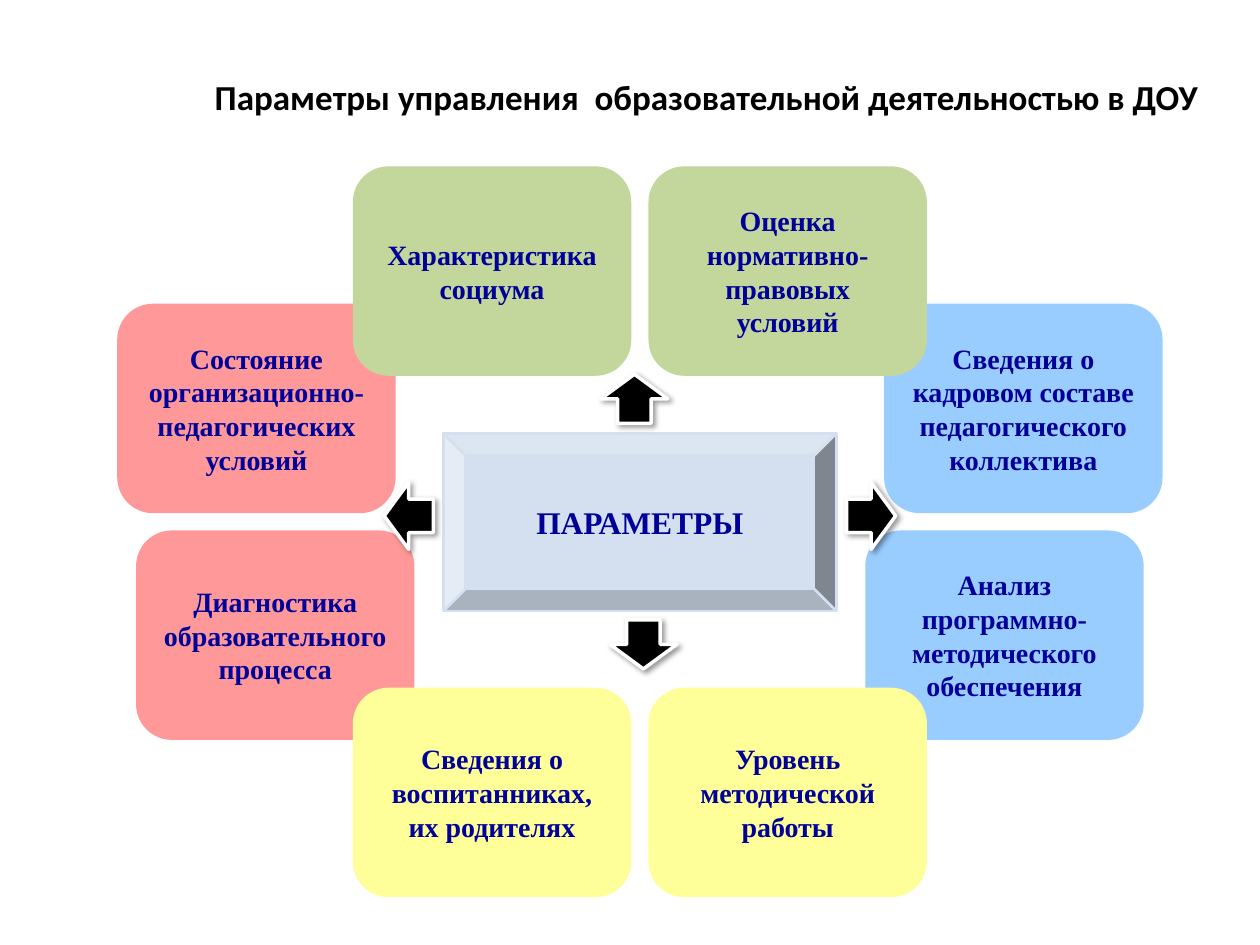
from lxml import etree
from pptx import Presentation
from pptx.dml.color import RGBColor
from pptx.enum import shapes, text
from pptx.oxml import ns
from pptx.util import Cm, Pt

COLORS = {
    "navy": "000099", "black": "000000", "white": "FFFFFF", "core": "D4E0EF",
    "red": "FF9999", "yellow": "FFFF99", "green": "C3D69B", "blue": "99CCFF",
}
SHAPE = shapes.MSO_SHAPE
AXIS = 12.9                # vertical axis of the diagram, cm
CARD_W, CARD_H = 5.56, 4.17
ARROW_W, ARROW_H = 1.35, 0.99


class ParameterSlide:
    label_font = "Times New Roman"
    title_font = "Calibri"

    def __init__(self, slide):
        self.slide = slide

    def add_words(self, frame, words, font, size, color):
        frame.word_wrap = True
        paragraph = frame.paragraphs[0]
        paragraph.alignment = text.PP_ALIGN.CENTER
        run = paragraph.add_run()
        run.text = words
        run.font.name = font
        run.font.size = Pt(size)
        run.font.bold = True
        run.font.color.rgb = RGBColor.from_string(COLORS[color])

    def title(self, words, left, top, width, height):
        heading = self.slide.shapes.title
        heading.left, heading.top = Cm(left), Cm(top)
        heading.width, heading.height = Cm(width), Cm(height)
        heading.text_frame.vertical_anchor = text.MSO_ANCHOR.TOP
        self.add_words(heading.text_frame, words, self.title_font, 20, "black")

    def block(self, kind, center, top, width, height, fill, line, weight):
        block = self.slide.shapes.add_shape(
            kind, Cm(center - width / 2), Cm(top), Cm(width), Cm(height))
        block.shadow.inherit = False
        block.fill.solid()
        block.fill.fore_color.rgb = RGBColor.from_string(COLORS[fill])
        block.line.color.rgb = RGBColor.from_string(COLORS[line])
        block.line.width = Pt(weight)
        return block

    def label(self, kind, words, center, top, width, height, color, size=16):
        block = self.block(kind, center, top, width, height, color, color, 1.5)
        block.text_frame.vertical_anchor = text.MSO_ANCHOR.MIDDLE
        self.add_words(block.text_frame, words, self.label_font, size, "navy")

    def arrow(self, center, middle, rotation):
        arrow = self.block(SHAPE.UP_ARROW, center, middle - ARROW_H / 2,
                           ARROW_W, ARROW_H, "black", "white", 2)
        arrow.rotation = rotation
        # Soft shadow towards the lower right
        effects = arrow.element.spPr.find(ns.qn("a:effectLst"))
        shadow = etree.SubElement(
            effects, ns.qn("a:outerShdw"), blurRad=str(Pt(3)),
            dist=str(Pt(2)), dir="2700000", algn="tl", rotWithShape="0")
        tint = etree.SubElement(shadow, ns.qn("a:srgbClr"), val=COLORS["black"])
        etree.SubElement(tint, ns.qn("a:alpha"), val="40000")


def main():
    deck = Presentation()
    deck.slide_width, deck.slide_height = Cm(25.4), Cm(19.05)
    page = ParameterSlide(deck.slides.add_slide(deck.slide_layouts[5]))

    page.title("Параметры управления  образовательной деятельностью в ДОУ",
               4.01, 1.4, 20.47, 1.96)

    # Central block
    page.label(SHAPE.BEVEL, "ПАРАМЕТРЫ", AXIS, 8.74, 7.92, 3.58, "core", 18)

    # Cards mirrored about the axis: distance from axis, top
    places = [(7.73, 6.15), (7.35, 10.72), (2.98, 13.89), (2.98, 3.38)]
    left_cards = [
        ("Состояние организационно-педагогических условий", "red"),
        ("Диагностика образовательного процесса", "red"),
        ("Сведения о воспитанниках, их родителях", "yellow"),
        ("Характеристика социума", "green"),
    ]
    right_cards = [
        ("Сведения о кадровом составе педагогического коллектива", "blue"),
        ("Анализ программно-методического обеспечения", "blue"),
        ("Уровень методической работы", "yellow"),
        ("Оценка нормативно-правовых условий", "green"),
    ]
    for side, cards in ((-1, left_cards), (1, right_cards)):
        for (distance, top), (words, color) in zip(places, cards):
            page.label(SHAPE.FLOWCHART_ALTERNATE_PROCESS, words,
                       AXIS + side * distance, top, CARD_W, CARD_H, color)

    # Arrows out of the central block: centre, middle, rotation
    for center, middle, rotation in [(12.79, 8.04, 0), (8.24, 10.4, 270),
                                     (17.56, 10.4, 90), (12.97, 12.99, 180)]:
        page.arrow(center, middle, rotation)

    deck.save("out.pptx")


if __name__ == "__main__":
    main()
